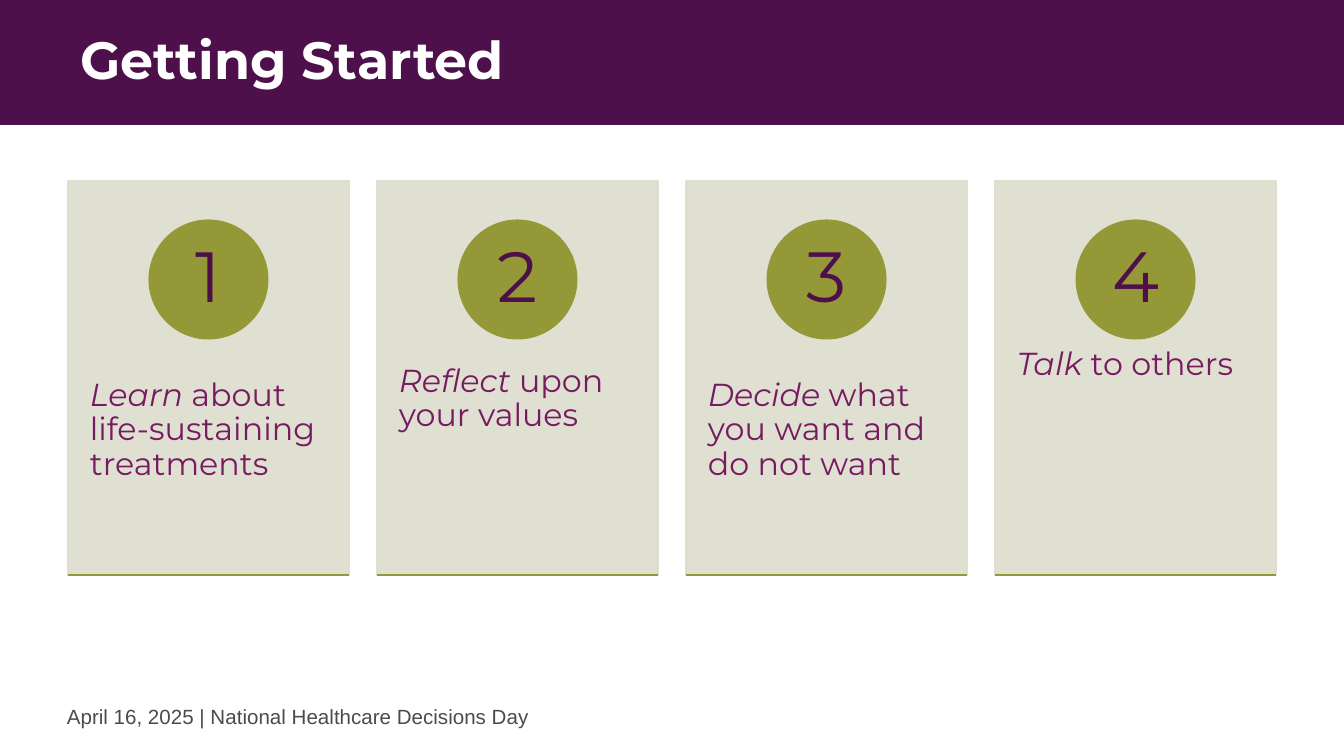
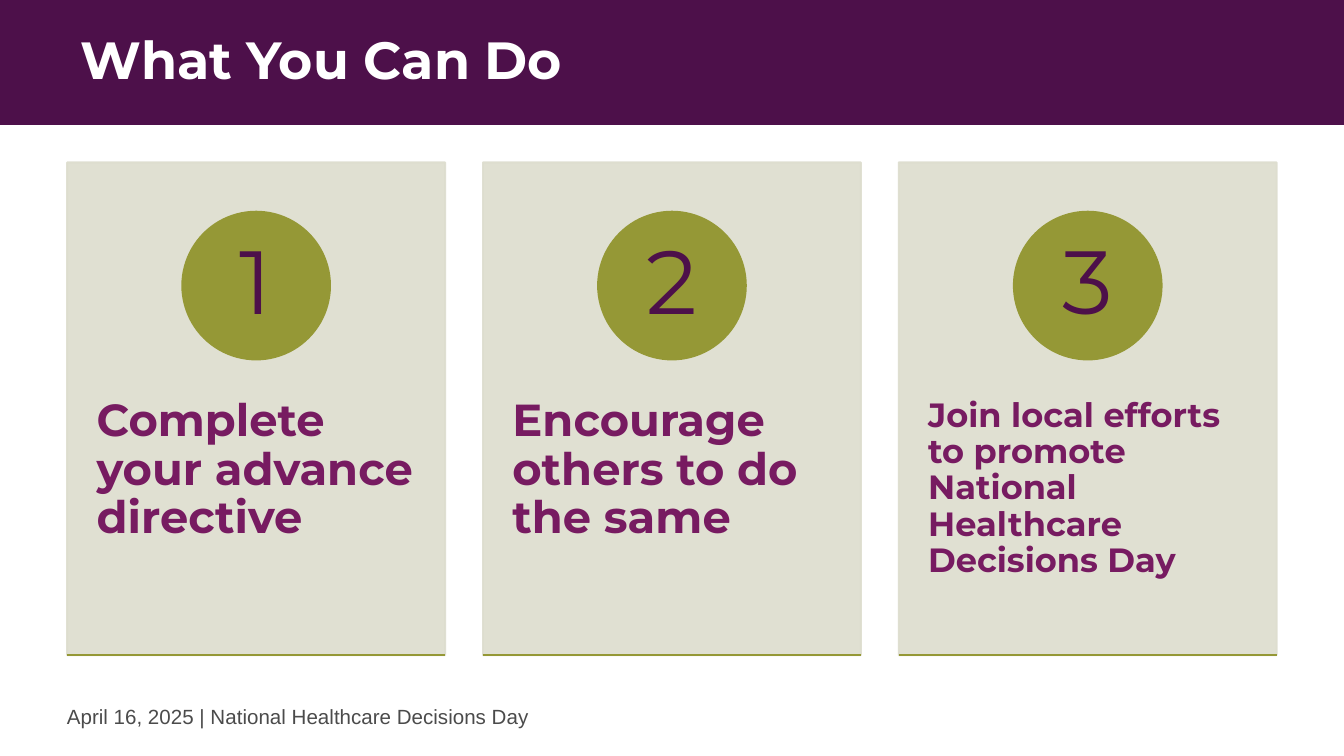
from dataclasses import dataclass
from typing import Any, NamedTuple

import lxml.etree
import pptx
import pptx.dml.color
import pptx.enum.shapes
import pptx.enum.text
import pptx.oxml.ns
import pptx.util

Pt = pptx.util.Pt
RGBColor = pptx.dml.color.RGBColor
Shapes = pptx.enum.shapes.MSO_SHAPE
Align = pptx.enum.text.PP_ALIGN
Anchor = pptx.enum.text.MSO_ANCHOR
qn = pptx.oxml.ns.qn


@dataclass(frozen=True)
class Theme:
    plum: str = "4D104A"
    berry: str = "771B61"
    olive: str = "959836"
    sand: str = "DDDDCE"
    white: str = "FFFFFF"
    grey: str = "4B4B4B"
    heading_font: str = "Montserrat"
    footer_font: str = "Arial"
    title_size: float = 28
    footer_size: float = 11
    card_opacity: int = 90


class Box(NamedTuple):
    left: float
    top: float
    width: float
    height: float

    def lengths(self) -> list[int]:
        return [Pt(value) for value in self]


class TextRun(NamedTuple):
    text: str
    size: float
    color: str
    font: str
    bold: bool = False
    italic: bool = False


class Step(NamedTuple):
    text: str
    size: float
    lead: str = ""
    bold: bool = False


class StepSlide(NamedTuple):
    title: str
    top: float
    card_width: float
    card_height: float
    number_size: float
    steps: list[Step]


THEME = Theme()
SLIDE_WIDTH, SLIDE_HEIGHT = 720, 405
BAND = Box(0, 0, SLIDE_WIDTH, 67)
TITLE = Box(36, 0, 648, 67)
FOOTER = Box(28.8, 373.5, 360, 21)
FOOTER_TEXT = "April 16, 2025 | National Healthcare Decisions Day"

STEP_SLIDES = [
    StepSlide("Getting Started", 97, 150.5, 211, 38, [
        Step(" about life-sustaining treatments", 17, "Learn"),
        Step(" upon your values", 17, "Reflect"),
        Step(" what you want and do not want", 17, "Decide"),
        Step(" to others", 17, "Talk"),
    ]),
    StepSlide("What You Can Do", 87, 202.5, 264, 48, [
        Step("Complete your advance directive", 24, bold=True),
        Step("Encourage others to do the same", 24, bold=True),
        Step("Join local efforts to promote National Healthcare Decisions Day", 18, bold=True),
    ]),
]


def apply_format(target: Any, values: dict[str, Any]) -> None:
    for name, value in values.items():
        setattr(target, name, value)


def write_text(shape: Any, runs: list[TextRun], frame_format: dict[str, Any],
               paragraph_format: dict[str, Any]) -> None:
    frame = shape.text_frame
    apply_format(frame, {"word_wrap": True} | frame_format)
    paragraph = frame.paragraphs[0]
    apply_format(paragraph, paragraph_format)
    for item in runs:
        run = paragraph.add_run()
        run.text = item.text
        apply_format(run.font, {"name": item.font, "size": Pt(item.size),
                                "bold": item.bold, "italic": item.italic})
        run.font.color.rgb = RGBColor.from_string(item.color)


def add_text(slide: Any, box: Box, runs: list[TextRun], frame_format: dict[str, Any],
             paragraph_format: dict[str, Any]) -> None:
    shape = slide.shapes.add_textbox(*box.lengths())
    write_text(shape, runs, frame_format, paragraph_format)


def add_filled(slide: Any, kind: Any, box: Box, color: str, opacity: int = 100,
               line_width: float = 1) -> Any:
    shape = slide.shapes.add_shape(kind, *box.lengths())
    shape.shadow.inherit = False
    shape.fill.solid()
    shape.fill.fore_color.rgb = RGBColor.from_string(color)
    if line_width:
        shape.line.color.rgb = RGBColor.from_string(color)
        shape.line.width = Pt(line_width)
    else:
        shape.line.fill.background()
    if opacity < 100:
        for element in list(shape.element.spPr.iter(qn("a:srgbClr"))):
            lxml.etree.SubElement(element, qn("a:alpha"), val=str(opacity * 1000))
    return shape


def add_rule(slide: Any, left: float, top: float, width: float) -> None:
    rule = slide.shapes.add_connector(pptx.enum.shapes.MSO_CONNECTOR.STRAIGHT,
                                      Pt(left), Pt(top), Pt(left + width), Pt(top))
    rule.line.color.rgb = RGBColor.from_string(THEME.olive)
    rule.line.width = Pt(1)
    lxml.etree.SubElement(rule.element.spPr, qn("a:effectLst"))


def add_card(slide: Any, card: Box, number: int, number_size: float, step: Step) -> None:
    add_filled(slide, Shapes.RECTANGLE, card, THEME.sand, THEME.card_opacity)

    lead = [TextRun(step.lead, step.size, THEME.berry, THEME.heading_font, italic=True)]
    body = TextRun(step.text, step.size, THEME.berry, THEME.heading_font, step.bold)
    side, edge = Pt(round(card.width * 0.078, 2)), Pt(26)
    text_box = Box(card.left, card.top + 0.38 * card.height, card.width, 0.6 * card.height)
    add_text(slide, text_box, (lead if step.lead else []) + [body],
             {"margin_left": side, "margin_right": side,
              "margin_top": edge, "margin_bottom": edge},
             {"line_spacing": 0.9})

    diameter = 0.3 * card.height
    circle = add_filled(slide, Shapes.OVAL,
                        Box(card.left + (card.width - diameter) / 2,
                            card.top + 0.1 * card.height, diameter, diameter),
                        THEME.olive)
    write_text(circle, [TextRun(str(number), number_size, THEME.plum, THEME.heading_font)],
               {"vertical_anchor": Anchor.MIDDLE, "margin_left": Pt(5), "margin_right": Pt(5),
                "margin_top": Pt(1), "margin_bottom": Pt(1)},
               {"alignment": Align.CENTER, "line_spacing": 0.9})

    add_rule(slide, card.left, card.top + card.height, card.width)


def add_step_slide(presentation: Any, content: StepSlide) -> None:
    slide = presentation.slides.add_slide(presentation.slide_layouts[6])
    add_filled(slide, Shapes.RECTANGLE, BAND, THEME.plum, line_width=0)
    add_text(slide, TITLE,
             [TextRun(content.title, THEME.title_size, THEME.white, THEME.heading_font, True)],
             {"vertical_anchor": Anchor.MIDDLE}, {"line_spacing": 0.9})

    gap = 0.1 * content.card_width
    pitch = content.card_width + gap
    first_left = (SLIDE_WIDTH - len(content.steps) * pitch + gap) / 2
    for index, step in enumerate(content.steps):
        card = Box(first_left + index * pitch, content.top,
                   content.card_width, content.card_height)
        add_card(slide, card, index + 1, content.number_size, step)

    add_text(slide, FOOTER,
             [TextRun(FOOTER_TEXT, THEME.footer_size, THEME.grey, THEME.footer_font)],
             {"auto_size": pptx.enum.text.MSO_AUTO_SIZE.SHAPE_TO_FIT_TEXT}, {})


def main() -> None:
    presentation = pptx.Presentation()
    apply_format(presentation, {"slide_width": Pt(SLIDE_WIDTH), "slide_height": Pt(SLIDE_HEIGHT)})
    for content in STEP_SLIDES:
        add_step_slide(presentation, content)
    presentation.save("out.pptx")


if __name__ == "__main__":
    main()
